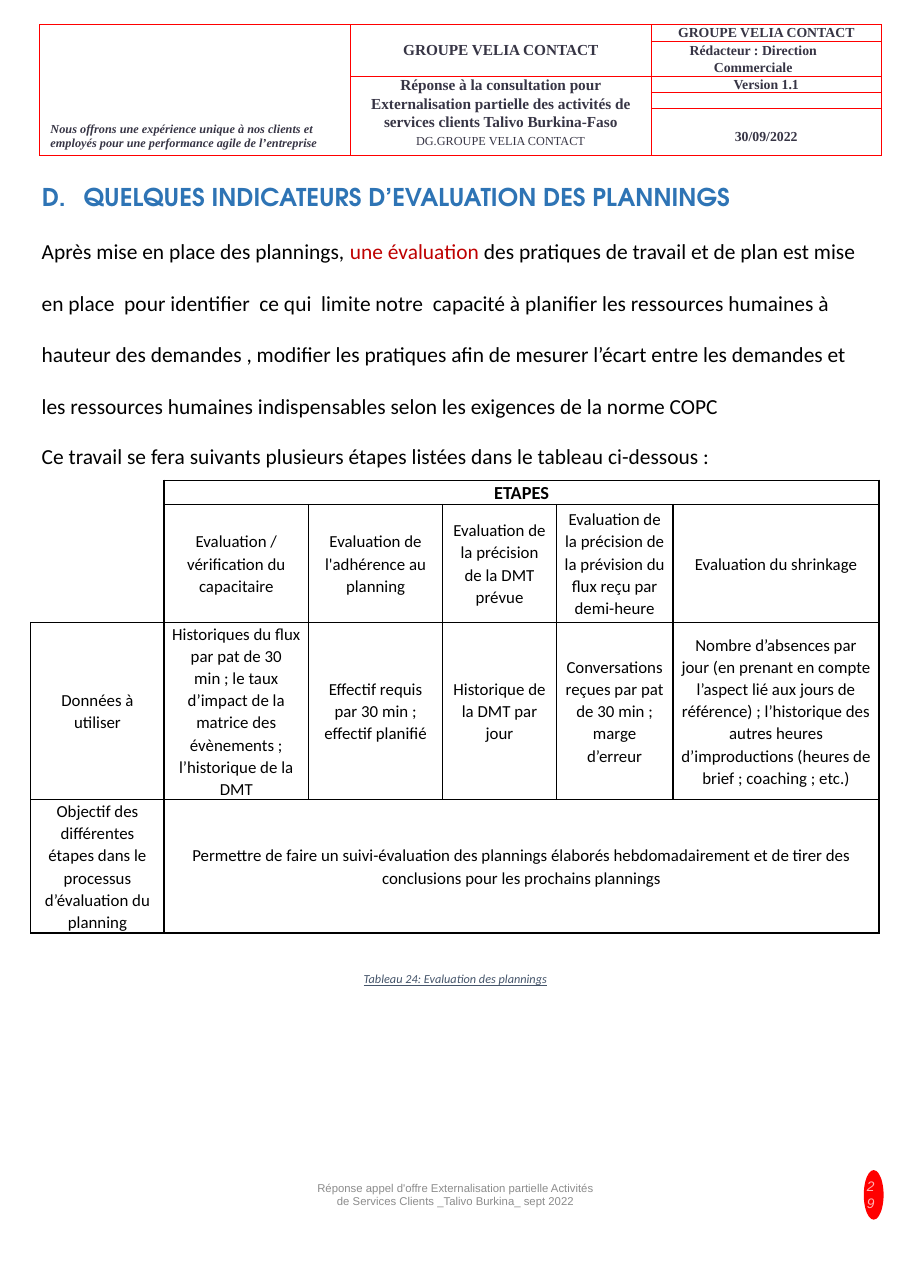
from dataclasses import dataclass
from pptx import Presentation
from pptx.dml.color import RGBColor as RGB
from pptx.enum.shapes import MSO_SHAPE as SHAPE
from pptx.enum.text import MSO_ANCHOR as ANCHOR, MSO_AUTO_SIZE as AUTO, PP_ALIGN as ALIGN
from pptx.oxml.ns import qn
from pptx.util import Emu, Pt
from lxml.etree import SubElement

EMU_PER_PX = 9144  # 100 px to the inch


@dataclass(frozen=True)
class Theme:
    red = "FF0000"
    accent = "BF0000"
    black = "000000"
    header = dict(name="Times New Roman", size=9, color="373545", bold=True)
    header_big = {**header, "size": 10}
    header_small = {**header, "size": 8, "bold": False}
    slogan = {**header, "size": 8, "italic": True}
    heading = dict(name="TeX Gyre Adventor", size=16, color="2E74B5", bold=True)
    body = dict(name="Calibri", size=14, color=black)
    body_accent = {**body, "color": accent}
    cell = dict(name="Calibri", size=11, color=black)
    cell_head = {**cell, "size": 12, "bold": True}
    caption = dict(name="Calibri", size=8, color="44546A", italic=True, underline=True)
    footer = dict(name="Arial", size=7.4, color="8C8C8C")
    page = dict(name="Arial", size=9, color="FFFFFF", italic=True)


T = Theme()
CENTERED = dict(alignment=ALIGN.CENTER)

STAGES = [
    "Evaluation / vérification du capacitaire",
    "Evaluation de l'adhérence au planning",
    "Evaluation de la précision de la DMT prévue",
    "Evaluation de la précision de la prévision du flux reçu par demi-heure",
    "Evaluation du shrinkage",
]
DATA = [
    "Données à utiliser",
    "Historiques du flux par pat de 30 min ; le taux d’impact de la matrice des évènements ; "
    "l’historique de la DMT",
    "Effectif requis par 30 min ; effectif planifié",
    "Historique de la DMT par jour",
    "Conversations reçues par pat de 30 min ; marge d’erreur",
    "Nombre d’absences par jour (en prenant en compte l’aspect lié aux jours de référence) ; "
    "l’historique des autres heures d’improductions (heures de brief ; coaching ; etc.)",
]
GOAL = [
    "Objectif des différentes étapes dans le processus d’évaluation du planning",
    "Permettre de faire un suivi-évaluation des plannings élaborés hebdomadairement et de tirer "
    "des conclusions pour les prochains plannings",
]


def px(n):
    return Emu(n * EMU_PER_PX)


def box(*lengths):
    return [px(n) for n in lengths]


def set_all(obj, values):
    for name, value in values.items():
        setattr(obj, name, value)


def add_run(p, text, style):
    r = p.add_run()
    r.text = text
    values = dict(style)
    r.font.color.rgb = RGB.from_string(values.pop("color"))
    values["size"] = Pt(values["size"])
    set_all(r.font, values)


def write(tf, *paragraphs):
    """Fill a text frame with (paragraph format, [(text, style), ...]) pairs."""
    for i, (fmt, runs) in enumerate(paragraphs):
        p = tf.paragraphs[0] if i == 0 else tf.add_paragraph()
        set_all(p, fmt)
        for text, style in runs:
            add_run(p, text, style)


def add_text(slide, place, *paragraphs, anchor=ANCHOR.TOP, wrap=True):
    tf = slide.shapes.add_textbox(*box(*place)).text_frame
    set_all(tf, dict(word_wrap=wrap, vertical_anchor=anchor))
    write(tf, *paragraphs)
    return tf


def set_borders(cell, sides, color, width):
    tcPr = cell._tc.get_or_add_tcPr()
    for side in sides:
        ln = SubElement(tcPr, qn(f"a:ln{side}"), w=str(Pt(width)))
        fill = SubElement(ln, qn("a:solidFill"))
        SubElement(fill, qn("a:srgbClr"), val=color)


def add_grid(slide, left, top, cols, rows, color, width, side=0, partial=None):
    """Add a plain ruled table; partial maps (row, column) to the only sides ruled there."""
    frame = slide.shapes.add_table(len(rows), len(cols), *box(left, top, sum(cols), sum(rows)))
    table = frame.table
    set_all(table, dict(first_row=False, horz_banding=False))
    for col, w in zip(table.columns, cols):
        col.width = px(w)
    for i, (row, h) in enumerate(zip(table.rows, rows)):
        row.height = px(h)
        for j, cell in enumerate(row.cells):
            set_all(cell, dict(margin_left=px(side), margin_right=px(side),
                               margin_top=0, margin_bottom=0))
            set_borders(cell, (partial or {}).get((i, j), "LRTB"), color, width)
            cell.fill.background()
            # Keeps blank cells from stretching their rows
            SubElement(cell.text_frame.paragraphs[0]._p, qn("a:endParaRPr"), sz="600")
    return table


def add_header(slide):
    table = add_grid(slide, 36, 22, [282, 273, 209], [15, 32, 15, 14, 43], T.red, 0.25)
    for first, last in [((0, 0), (4, 0)), ((0, 1), (1, 1)), ((2, 1), (4, 1))]:
        table.cell(*first).merge(table.cell(*last))

    company = "GROUPE VELIA CONTACT"
    tight = {**CENTERED, "line_spacing": Pt(11.9)}
    contents = {
        (0, 1): [(CENTERED, [(company, T.header_big)])],
        (2, 1): [
            (tight, [("Réponse à la consultation pour", T.header_big)]),
            (tight, [("Externalisation partielle des activités de services clients "
                      "Talivo Burkina-Faso", T.header_big)]),
            ({**CENTERED, "space_before": Pt(2.6)}, [("DG." + company, T.header_small)]),
        ],
        (0, 2): [({**CENTERED, "line_spacing": Pt(10.7)}, [(company, T.header)])],
        (1, 2): [({"line_spacing": Pt(11.3)}, [("Rédacteur : Direction Commerciale", T.header)])],
        (2, 2): [({**CENTERED, "line_spacing": Pt(10.8)}, [("Version 1.1", T.header)])],
        (4, 2): [(CENTERED, [("30/09/2022", T.header)])],
    }
    for place, paragraphs in contents.items():
        write(table.cell(*place).text_frame, *paragraphs)
    table.cell(0, 1).vertical_anchor = ANCHOR.MIDDLE
    table.cell(4, 2).margin_top = px(19)
    author = table.cell(1, 2)
    author.margin_right = px(20)
    set_indent(author.text_frame.paragraphs[0], 57, -22)

    add_text(slide, (36, 105, 285, 37), ({}, [
        ("Nous offrons une expérience unique à nos clients et employés pour une performance "
         "agile de l’entreprise", T.slogan)]))


def set_indent(p, left, first):
    pPr = p._p.get_or_add_pPr()
    pPr.set("marL", str(px(left)))
    pPr.set("indent", str(px(first)))
    return pPr


def add_heading(slide, text):
    sp = slide.shapes.title
    set_all(sp, dict(zip(("left", "top", "width", "height"), box(28, 164, 767, 29))))
    tf = sp.text_frame
    set_all(tf, dict(word_wrap=True, auto_size=AUTO.NONE, vertical_anchor=ANCHOR.MIDDLE,
                     margin_top=0, margin_bottom=0))
    write(tf, (dict(alignment=ALIGN.LEFT, line_spacing=1.0), [(text, T.heading)]))
    pPr = set_indent(tf.paragraphs[0], 38, -38)
    SubElement(pPr, qn("a:buFont"), typeface="+mj-lt")
    SubElement(pPr, qn("a:buAutoNum"), type="alphaUcPeriod", startAt="4")


def add_intro(slide):
    tf = add_text(
        slide, (28, 193, 767, 240),
        (dict(line_spacing=2.0, space_after=Pt(8)), [
            ("Après mise en place des plannings, ", T.body),
            ("une évaluation ", T.body_accent),
            ("des pratiques de travail et de plan est mise en place  pour identifier  ce qui  "
             "limite notre  capacité à planifier les ressources humaines à hauteur des demandes , "
             "modifier les pratiques afin de mesurer l’écart entre les demandes et les ressources "
             "humaines indispensables selon les exigences de la norme COPC", T.body)]),
        (dict(line_spacing=1.5), [
            ("Ce travail se fera suivants plusieurs étapes listées dans le tableau ci-dessous :",
             T.body)]))
    set_all(tf, dict(margin_top=0, margin_bottom=0))


def add_stage_table(slide):
    table = add_grid(slide, 28, 436, [121, 131, 122, 103, 106, 187], [22, 107, 161, 121],
                     T.black, 1, side=7, partial={(0, 0): "R", (1, 0): "RB"})
    for row in (0, 3):
        table.cell(row, 1).merge(table.cell(row, 5))
    for i, (start, texts) in enumerate([(1, ["ETAPES"]), (1, STAGES), (0, DATA), (0, GOAL)]):
        for j, text in enumerate(texts, start):
            cell = table.cell(i, j)
            cell.vertical_anchor = ANCHOR.MIDDLE
            style = T.cell if i else T.cell_head
            write(cell.text_frame, ({**CENTERED, "line_spacing": 1.07}, [(text, style)]))
    add_text(slide, (319, 877, 189, 24),
             (CENTERED, [("Tableau 24: Evaluation des plannings", T.caption)]), wrap=False)


def add_footer(slide):
    add_text(slide, (274, 1053, 279, 62), (CENTERED, [
        ("Réponse appel d'offre Externalisation partielle Activités de Services Clients "
         "_Talivo Burkina_ sept 2022", T.footer)]), anchor=ANCHOR.MIDDLE)
    badge = slide.shapes.add_shape(SHAPE.OVAL, *box(784, 1062, 18, 45))
    badge.shadow.inherit = False
    badge.fill.solid()
    badge.fill.fore_color.rgb = RGB.from_string(T.red)
    badge.line.fill.background()
    tf = add_text(slide, (777, 1053, 24, 62), (dict(alignment=ALIGN.RIGHT), [("29", T.page)]),
                  anchor=ANCHOR.MIDDLE)
    color = tf.paragraphs[0].runs[0]._r.find(".//" + qn("a:srgbClr"))
    SubElement(color, qn("a:alpha"), val="70000")


def main():
    prs = Presentation()
    set_all(prs, dict(slide_width=px(826), slide_height=px(1169)))
    slide = prs.slides.add_slide(prs.slide_layouts[5])
    add_header(slide)
    add_heading(slide, "QUELQUES INDICATEURS D’EVALUATION DES PLANNINGS")
    add_intro(slide)
    add_stage_table(slide)
    add_footer(slide)
    prs.save("out.pptx")


if __name__ == "__main__":
    main()
